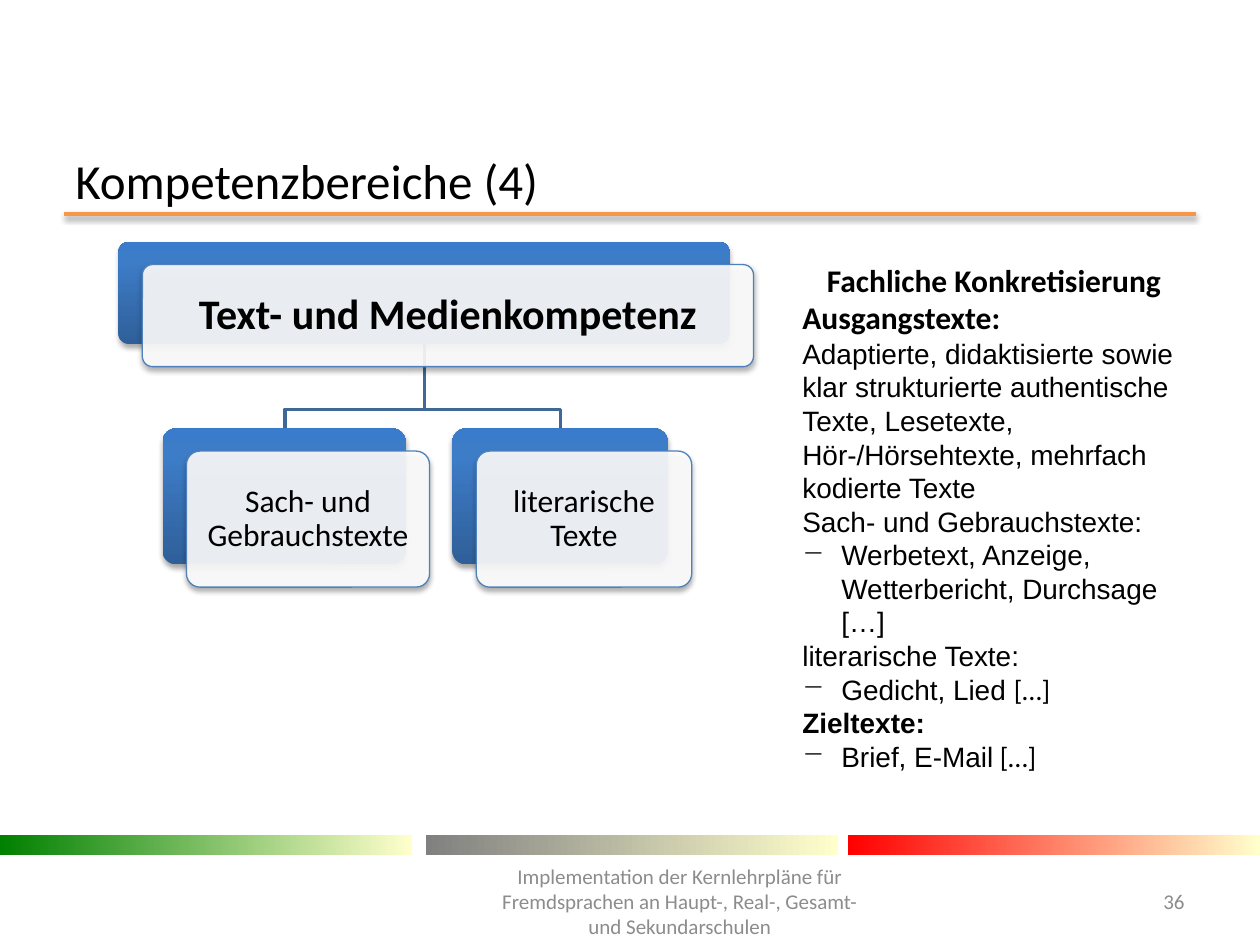
from dataclasses import dataclass

from lxml.etree import SubElement
from pptx import Presentation
from pptx.dml.color import RGBColor
from pptx.enum.shapes import MSO_CONNECTOR, MSO_SHAPE
from pptx.enum.text import MSO_ANCHOR, PP_ALIGN
from pptx.oxml.ns import qn
from pptx.util import Inches, Pt


@dataclass(frozen=True)
class Theme:
    heading_font: str = "Calibri"
    body_font: str = "Arial"
    black: str = "000000"
    grey: str = "8C8C8C"
    white: str = "FFFFFF"
    orange: str = "F79646"
    connector: str = "3F6797"
    card_line: str = "4F81BD"
    card_stops: tuple = ((0, "2F5F99"), (80, "3D7CC7"), (100, "3A7CCB"))
    band_starts: tuple = ("008000", "808080", "FF0000")
    band_end: str = "FFFFCC"
    title_size: int = 28
    root_size: int = 24
    heading_size: int = 18
    body_size: int = 16
    footer_size: int = 12


THEME = Theme()


def color(value):
    return RGBColor.from_string(value)


def style_font(font, name, size, value=THEME.black, bold=False):
    font.name, font.size, font.bold = name, Pt(size), bold
    font.color.rgb = color(value)


def add_shadow(shape, alpha=35, distance=1.8):
    properties = shape._element.spPr
    effects = properties.find(qn("a:effectLst"))
    if effects is None:
        effects = SubElement(properties, qn("a:effectLst"))
    shadow = SubElement(effects, qn("a:outerShdw"), blurRad=str(Pt(3.1)),
                        dist=str(Pt(distance)), dir="5400000", rotWithShape="0")
    tint = SubElement(shadow, qn("a:srgbClr"), val=THEME.black)
    SubElement(tint, qn("a:alpha"), val=str(alpha * 1000))


def fill_gradient(shape, stops, angle):
    """Fill with (percent, colour) stops; the angle runs counter-clockwise."""
    shape.fill.gradient()
    shape.fill.gradient_angle = angle
    stop_list = shape._element.spPr.find(qn("a:gradFill")).find(qn("a:gsLst"))
    for old_stop in list(stop_list):
        stop_list.remove(old_stop)
    for percent, value in stops:
        stop = SubElement(stop_list, qn("a:gs"), pos=str(percent * 1000))
        SubElement(stop, qn("a:srgbClr"), val=value)


def add_plain_shape(page, kind, left, top, width, height):
    shape = page.shapes.add_shape(kind, Inches(left), Inches(top),
                                  Inches(width), Inches(height))
    shape.shadow.inherit = False
    shape.line.fill.background()
    return shape


def add_text(page, left, top, width, height, text, size,
             value=THEME.black, align=PP_ALIGN.LEFT):
    box = page.shapes.add_textbox(Inches(left), Inches(top),
                                  Inches(width), Inches(height))
    frame = box.text_frame
    frame.word_wrap = True
    frame.vertical_anchor = MSO_ANCHOR.MIDDLE
    frame.text = text
    para = frame.paragraphs[0]
    para.alignment = align
    style_font(para.runs[0].font, THEME.heading_font, size, value)


def add_title_rule(page):
    rule = page.shapes.add_connector(MSO_CONNECTOR.STRAIGHT, Inches(0.51),
                                     Inches(1.7), Inches(9.49), Inches(1.7))
    rule.line.color.rgb = color(THEME.orange)
    rule.line.width = Pt(2)
    add_shadow(rule, 38, 1.6)


def add_bands(page):
    for left, start in zip((0, 3.38, 6.73), THEME.band_starts):
        band = add_plain_shape(page, MSO_SHAPE.RECTANGLE, left, 6.63, 3.27, 0.16)
        fill_gradient(band, ((0, start), (100, THEME.band_end)), 0)


def add_branch(page, child_x):
    """Draw the elbow line from the root card to a child card."""
    root_x, top, bend, bottom = 3.37, 2.72, 3.25, 3.4
    builder = page.shapes.build_freeform(Inches(root_x), Inches(top))
    corners = ((root_x, bend), (child_x, bend), (child_x, bottom))
    builder.add_line_segments([(Inches(x), Inches(y)) for x, y in corners],
                              close=False)
    branch = builder.convert_to_shape()
    branch.shadow.inherit = False
    branch.fill.background()
    branch.line.color.rgb = color(THEME.connector)
    branch.line.width = Pt(2)


def add_card(page, left, top, width, height, text, size, bold=False):
    """Draw a blue card with a translucent, labelled card offset on top."""
    back = add_plain_shape(page, MSO_SHAPE.ROUNDED_RECTANGLE,
                           left, top, width, height)
    fill_gradient(back, THEME.card_stops, 90)
    front = add_plain_shape(page, MSO_SHAPE.ROUNDED_RECTANGLE,
                            left + 0.19, top + 0.18, width, height)
    front.fill.solid()
    front.fill.fore_color.rgb = color(THEME.white)
    tint = front._element.spPr.find(qn("a:solidFill"))[0]
    SubElement(tint, qn("a:alpha"), val="90000")
    front.line.color.rgb = color(THEME.card_line)
    front.line.width = Pt(0.75)
    for card in (back, front):
        card.adjustments[0] = 0.1
        add_shadow(card)
    frame = front.text_frame
    frame.word_wrap = True
    frame.margin_left = frame.margin_right = Inches(0.1)
    frame.vertical_anchor = MSO_ANCHOR.MIDDLE
    frame.text = text
    para = frame.paragraphs[0]
    para.alignment = PP_ALIGN.CENTER
    para.line_spacing = 0.9
    style_font(para.runs[0].font, THEME.heading_font, size, bold=bold)


def make_dash_item(para):
    properties = para._p.get_or_add_pPr()
    properties.set("marL", str(Inches(0.31)))
    properties.set("indent", str(-Inches(0.31)))
    SubElement(properties, qn("a:buChar"), char="−")


def add_details(page):
    heading = (THEME.heading_font, THEME.heading_size, THEME.black, True)
    strong = (THEME.body_font, THEME.body_size, THEME.black, True)
    body = (THEME.body_font, THEME.body_size)
    ellipsis = (THEME.heading_font, THEME.body_size)
    rows = (
        (False, (("Fachliche Konkretisierung", heading),)),
        (False, (("Ausgangstexte:", heading),)),
        (False, (("Adaptierte, didaktisierte sowie klar strukturierte authentische "
                  "Texte, Lesetexte, Hör-/Hörsehtexte, mehrfach kodierte Texte", body),)),
        (False, (("Sach- und Gebrauchstexte:", body),)),
        (True, (("Werbetext, Anzeige, Wetterbericht, Durchsage […]", body),)),
        (False, (("literarische Texte:", body),)),
        (True, (("Gedicht, Lied ", body), ("[…]", ellipsis))),
        (False, (("Zieltexte:", strong),)),
        (True, (("Brief, E-Mail", body), (" […]", ellipsis))),
    )
    box = page.shapes.add_textbox(Inches(6.27), Inches(2.02),
                                  Inches(3.24), Inches(4.64))
    frame = box.text_frame
    frame.word_wrap = True
    for index, (dashed, spans) in enumerate(rows):
        para = frame.add_paragraph() if index else frame.paragraphs[0]
        if dashed:
            make_dash_item(para)
        for text, style in spans:
            span = para.add_run()
            span.text = text
            style_font(span.font, *style)
    frame.paragraphs[0].alignment = PP_ALIGN.CENTER


def main():
    deck = Presentation()
    deck.slide_width, deck.slide_height = Inches(10), Inches(7.5)
    page = deck.slides.add_slide(deck.slide_layouts[6])
    add_title_rule(page)
    add_bands(page)
    add_text(page, 0.5, 1.23, 9, 0.39, "Kompetenzbereiche (4)", THEME.title_size)
    add_text(page, 3.82, 6.95, 3.15, 0.4,
             "Implementation der Kernlehrpläne für Fremdsprachen an "
             "Haupt-, Real-, Gesamt- und Sekundarschulen",
             THEME.footer_size, THEME.grey, PP_ALIGN.CENTER)
    add_text(page, 8.86, 6.95, 0.64, 0.4, "36",
             THEME.footer_size, THEME.grey, PP_ALIGN.RIGHT)
    for child_x in (4.45, 2.26):
        add_branch(page, child_x)
    add_card(page, 0.94, 1.92, 4.85, 0.81, "Text- und Medienkompetenz",
             THEME.root_size, bold=True)
    add_card(page, 1.29, 3.4, 1.93, 1.08, "Sach- und Gebrauchstexte",
             THEME.heading_size)
    add_card(page, 3.59, 3.4, 1.71, 1.08, "literarische Texte",
             THEME.heading_size)
    add_details(page)
    deck.save("out.pptx")


if __name__ == "__main__":
    main()
